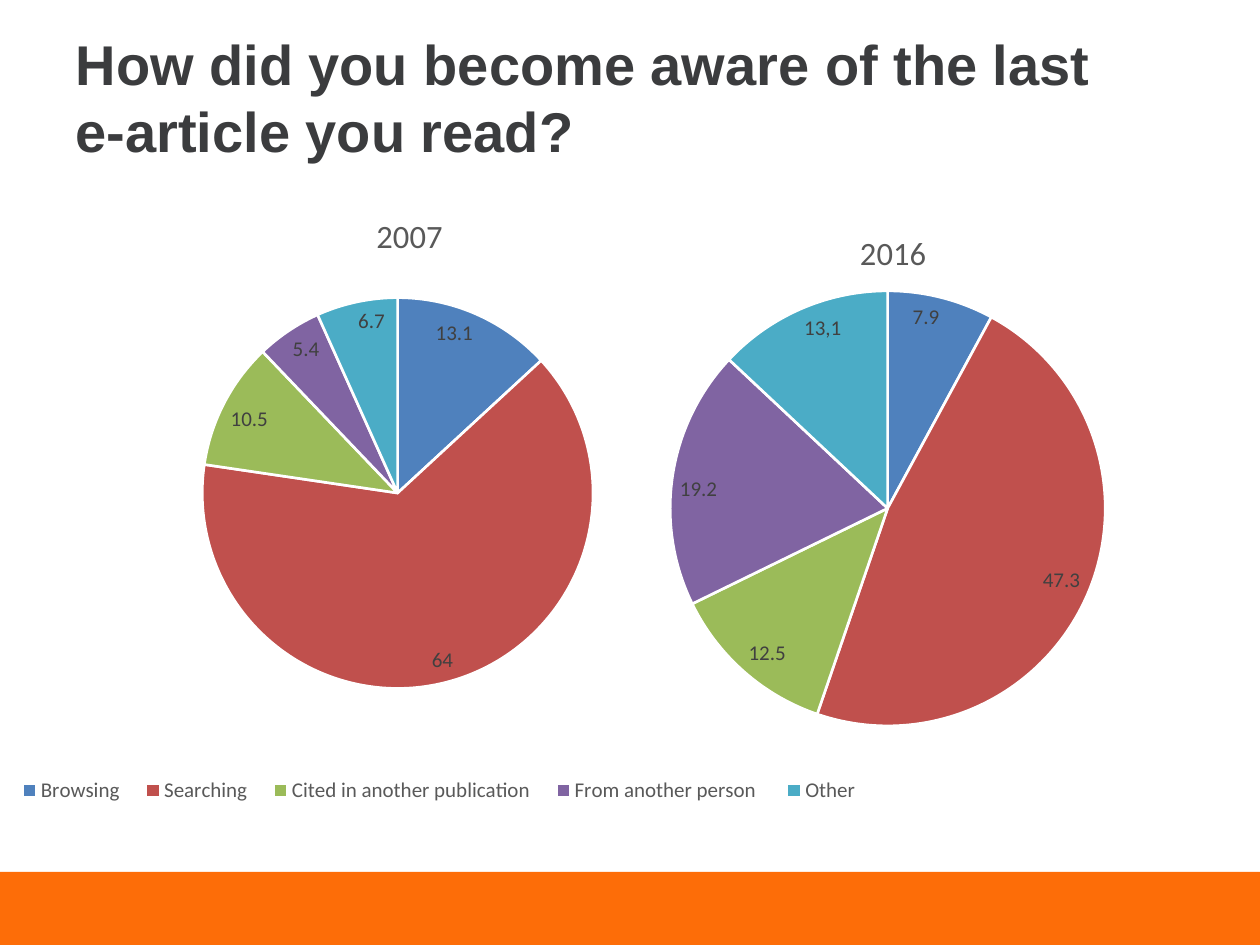
from dataclasses import dataclass

from lxml import etree
from pptx import Presentation
from pptx.chart.data import CategoryChartData
from pptx.dml.color import RGBColor
from pptx.enum.chart import XL_CHART_TYPE as ChartType
from pptx.enum.chart import XL_LABEL_POSITION as LabelPosition
from pptx.enum.chart import XL_LEGEND_POSITION as LegendPosition
from pptx.enum.shapes import MSO_SHAPE as Shape
from pptx.enum.text import MSO_ANCHOR as Anchor
from pptx.enum.text import PP_ALIGN as Align
from pptx.oxml.ns import qn
from pptx.util import Emu, Pt

EMU_PER_PX = 914400 / 126


@dataclass(frozen=True)
class Theme:
    title: str = "3B3C3E"
    caption: str = "595959"
    label: str = "404040"
    band: str = "FD6D08"
    gap: str = "FFFFFF"
    slices: tuple[str, ...] = ("4F81BD", "C0504D", "9BBB59", "8064A2", "4BACC6")
    heading_font: str = "Arial"
    chart_font: str = "Calibri"
    heading_size: float = 32
    caption_size: float = 18.6
    label_size: float = 12


@dataclass(frozen=True)
class Box:
    left: int
    top: int
    width: int
    height: int

    def emu(self) -> list[Emu]:
        return [px(v) for v in (self.left, self.top, self.width, self.height)]


@dataclass(frozen=True)
class Pie:
    """One year's chart; all boxes are in slide pixels."""
    year: str
    series: str
    categories: tuple[str, ...]
    values: tuple[float, ...]
    frame: Box
    plot: Box
    caption: Box
    legend: Box | None = None
    custom_label: tuple[int, str] | None = None


THEME = Theme()
SOURCES = ("Browsing", "Searching", "Cited in another publication",
           "From another person ", "Other")
PIES = (
    Pie("2007", "Series 1", SOURCES, (13.1, 64, 10.5, 5.4, 6.7),
        frame=Box(-81, 136, 969, 703), plot=Box(202, 298, 391, 391),
        caption=Box(371, 207, 66, 40), legend=Box(3, 774, 872, 32)),
    Pie("2016", "2016", ("1", "2", "3", "4", "5"), (7.9, 47.3, 12.5, 19.2, 13),
        frame=Box(578, 195, 619, 548), plot=Box(670, 291, 435, 435),
        caption=Box(854, 224, 66, 40), custom_label=(4, "13,1")),
)


def px(value: int) -> Emu:
    return Emu(round(value * EMU_PER_PX))


def format_font(font, name: str, size: float, color: str, bold: bool = False) -> None:
    for key, value in dict(name=name, size=Pt(size), bold=bold).items():
        setattr(font, key, value)
    font.color.rgb = RGBColor.from_string(color)


def place(element, box: Box, frame: Box, inner: bool = False, sized: bool = True) -> None:
    """Give a chart part a manual layout, as fractions of the chart frame."""
    for old in element.findall(qn("c:layout")):
        element.remove(old)
    layout = etree.Element(qn("c:layout"))
    manual = etree.SubElement(layout, qn("c:manualLayout"))
    settings = {"layoutTarget": "inner"} if inner else {}
    settings |= {"xMode": "edge", "yMode": "edge",
                 "x": round((box.left - frame.left) / frame.width, 3),
                 "y": round((box.top - frame.top) / frame.height, 3)}
    if sized:
        settings |= {"w": round(box.width / frame.width, 3),
                     "h": round(box.height / frame.height, 3)}
    for tag, value in settings.items():
        etree.SubElement(manual, qn(f"c:{tag}")).set("val", str(value))
    before = [child for child in element
              if child.tag in (qn("c:tx"), qn("c:legendPos"), qn("c:legendEntry"))]
    element.insert(len(before), layout)


def add_pie(slide, pie: Pie) -> None:
    data = CategoryChartData()
    data.categories = pie.categories
    data.add_series(pie.series, pie.values)
    chart = slide.shapes.add_chart(ChartType.PIE, *pie.frame.emu(), data).chart
    format_font(chart.font, THEME.chart_font, 10, "000000")
    plot = chart.plots[0]
    plot.vary_by_categories = True
    place(chart.element.find(".//" + qn("c:plotArea")), pie.plot, pie.frame, inner=True)

    # Year caption
    chart.has_title = True
    caption = chart.chart_title.text_frame
    caption.text = pie.year
    format_font(caption.paragraphs[0].runs[0].font, THEME.chart_font,
                THEME.caption_size, THEME.caption)
    place(chart.element.find(".//" + qn("c:title")), pie.caption, pie.frame, sized=False)

    # Slices and their values
    series = plot.series[0]
    for index, color in enumerate(THEME.slices):
        slice_format = series.points[index].format
        slice_format.fill.solid()
        slice_format.fill.fore_color.rgb = RGBColor.from_string(color)
        slice_format.line.color.rgb = RGBColor.from_string(THEME.gap)
        slice_format.line.width = Pt(1.5)
    labels = series.data_labels
    for key, value in dict(show_value=True, show_percentage=False,
                           show_category_name=False, show_legend_key=False,
                           position=LabelPosition.INSIDE_END).items():
        setattr(labels, key, value)
    label_style = (THEME.chart_font, THEME.label_size, THEME.label)
    format_font(labels.font, *label_style)
    if pie.custom_label:
        index, text = pie.custom_label
        label = series.points[index].data_label
        label.text_frame.text = text
        format_font(label.text_frame.paragraphs[0].runs[0].font, *label_style)
        label.position = LabelPosition.INSIDE_END

    # Legend
    chart.has_legend = pie.legend is not None
    if pie.legend:
        chart.legend.position = LegendPosition.BOTTOM
        chart.legend.include_in_layout = False
        format_font(chart.legend.font, THEME.chart_font, THEME.label_size, THEME.caption)
        place(chart.element.find(".//" + qn("c:legend")), pie.legend, pie.frame)


def add_band(slide, box: Box) -> None:
    band = slide.shapes.add_shape(Shape.RECTANGLE, *box.emu())
    band.shadow.inherit = False
    band.fill.solid()
    band.fill.fore_color.rgb = RGBColor.from_string(THEME.band)
    band.line.fill.background()


def set_title(slide, text: str, box: Box) -> None:
    title = slide.shapes.title
    for key, value in zip(("left", "top", "width", "height"), box.emu()):
        setattr(title, key, value)
    frame = title.text_frame
    frame.text = text
    frame.word_wrap = True
    frame.vertical_anchor = Anchor.MIDDLE
    paragraph = frame.paragraphs[0]
    paragraph.alignment = Align.LEFT
    for run in paragraph.runs:
        format_font(run.font, THEME.heading_font, THEME.heading_size, THEME.title, bold=True)


def main() -> None:
    presentation = Presentation()
    presentation.slide_width, presentation.slide_height = px(1260), px(945)
    slide = presentation.slides.add_slide(presentation.slide_layouts[5])
    add_band(slide, Box(0, 872, 1260, 73))
    set_title(slide, "How did you become aware of the last\ve-article you read?",
              Box(63, 18, 1134, 158))
    for pie in PIES:
        add_pie(slide, pie)
    presentation.save("out.pptx")


if __name__ == "__main__":
    main()
